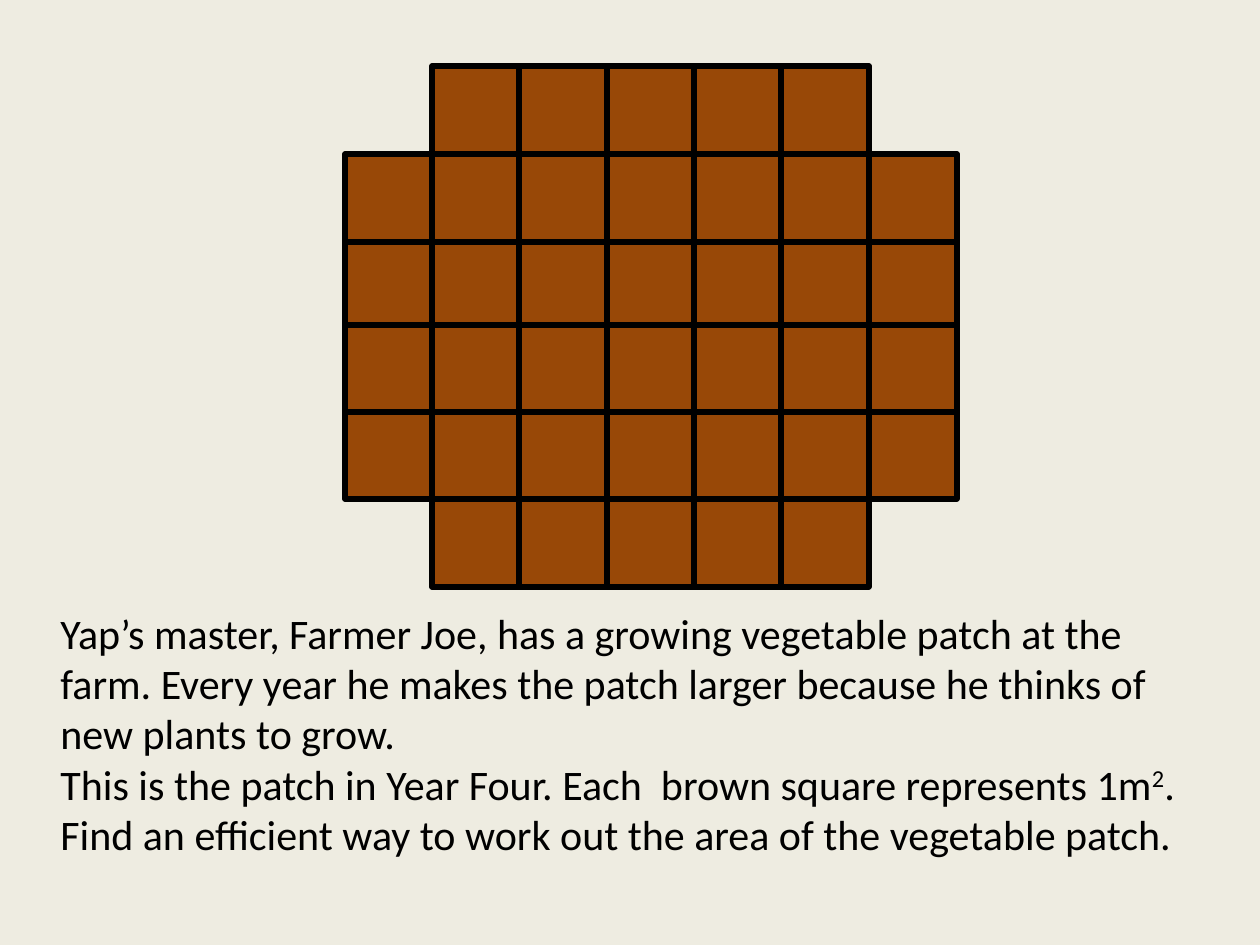
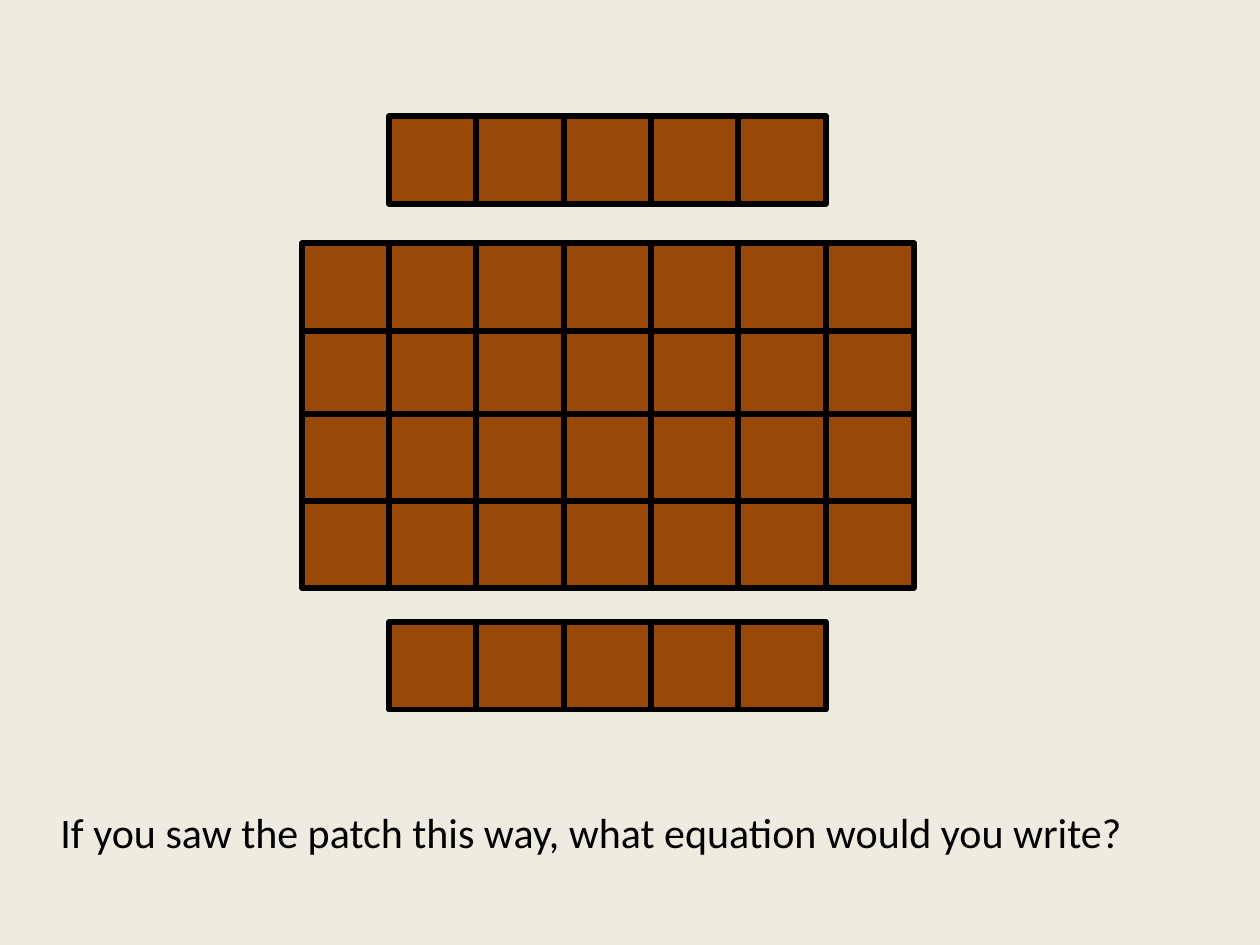
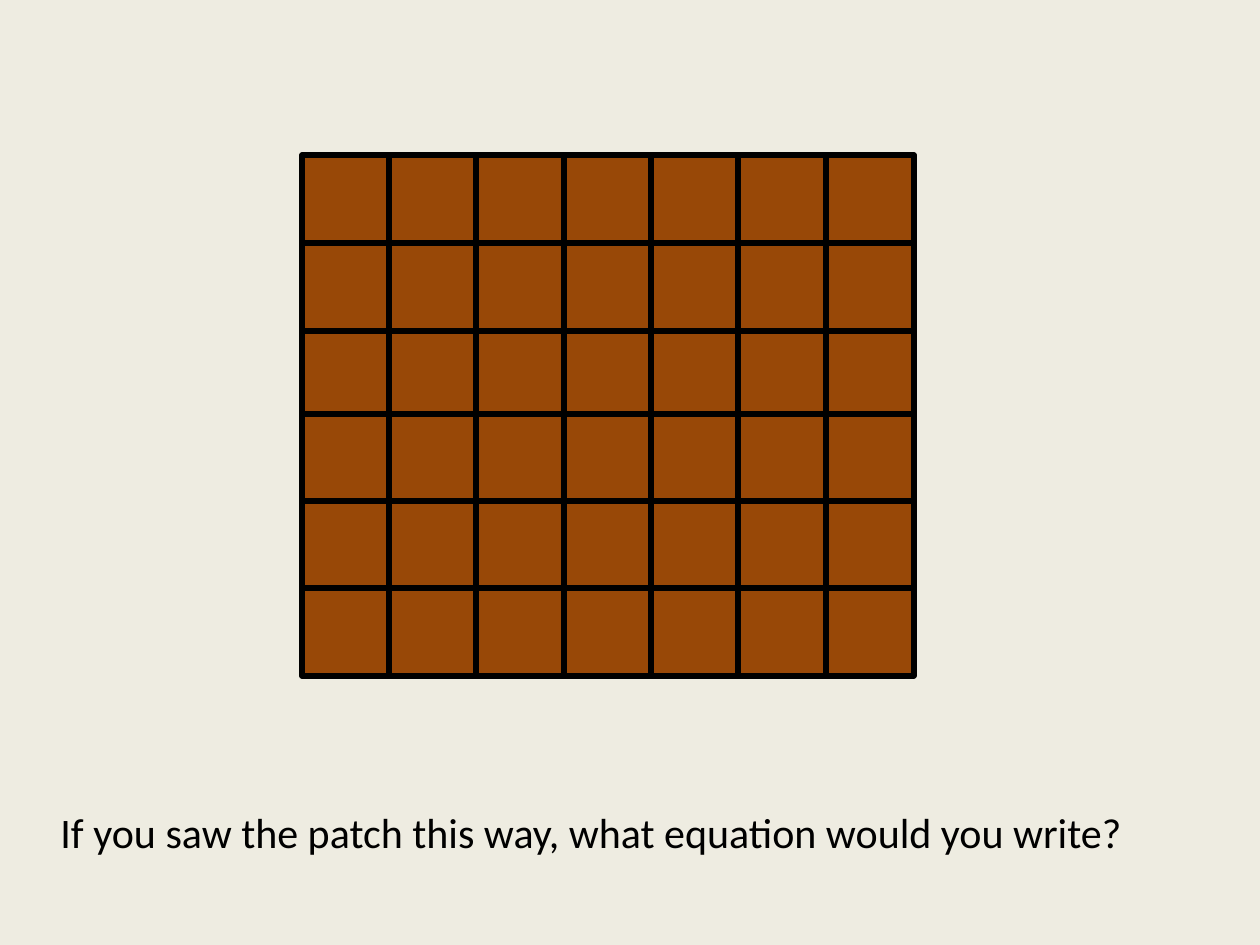
import dataclasses

import pptx
import pptx.dml.color
import pptx.enum.shapes
import pptx.enum.text
import pptx.util

EMU_PER_PX = 914400 // 126


@dataclasses.dataclass(frozen=True)
class Theme:
    background: str = "EEECE1"
    soil: str = "984807"
    ink: str = "000000"
    font: str = "Calibri"
    body_size: int = 24
    border_width: int = 3


def px(length):
    return length * EMU_PER_PX


def rgb(value):
    return pptx.dml.color.RGBColor.from_string(value)


def write_run(paragraph, text, *, font, size, color, superscript=False):
    run = paragraph.add_run()
    run.text = text
    run.font.name = font
    run.font.size = pptx.util.Pt(size)
    run.font.color.rgb = rgb(color)
    if superscript:
        run.font._element.set("baseline", "30000")


class PatchDeck:
    SQUARE = 88
    COLUMNS = 7
    COLUMN_SPAN = 524
    BED_ROW_OFFSETS = (0, 83, 170, 257)

    def __init__(self, theme):
        self.theme = theme
        self.presentation = pptx.Presentation()
        self.presentation.slide_width = px(1260)
        self.presentation.slide_height = px(945)
        self.slide = None

    def new_slide(self):
        blank = self.presentation.slide_layouts[6]
        self.slide = self.presentation.slides.add_slide(blank)
        fill = self.slide.background.fill
        fill.solid()
        fill.fore_color.rgb = rgb(self.theme.background)

    def square(self, patch, left, top):
        square = patch.shapes.add_shape(
            pptx.enum.shapes.MSO_SHAPE.RECTANGLE,
            px(left), px(top), px(self.SQUARE), px(self.SQUARE))
        square.shadow.inherit = False
        square.fill.solid()
        square.fill.fore_color.rgb = rgb(self.theme.soil)
        square.line.color.rgb = rgb(self.theme.ink)
        square.line.width = pptx.util.Pt(self.theme.border_width)

    def row(self, patch, left, top, columns):
        for column in columns:
            offset = self.COLUMN_SPAN * column // (self.COLUMNS - 1)
            self.square(patch, left + offset, top)

    def patch(self, left, bed_top, strip_tops, strip_columns):
        patch = self.slide.shapes.add_group_shape()
        for offset in reversed(self.BED_ROW_OFFSETS):
            self.row(patch, left, bed_top + offset, range(self.COLUMNS))
        for top in strip_tops:
            self.row(patch, left, top, strip_columns)

    def text(self, top, height, paragraphs):
        box = self.slide.shapes.add_textbox(px(48), px(top), px(1171), px(height))
        frame = box.text_frame
        frame.word_wrap = True
        frame.auto_size = pptx.enum.text.MSO_AUTO_SIZE.SHAPE_TO_FIT_TEXT
        for index, runs in enumerate(paragraphs):
            paragraph = frame.add_paragraph() if index else frame.paragraphs[0]
            for text, superscript in runs:
                write_run(paragraph, text, font=self.theme.font,
                          size=self.theme.body_size, color=self.theme.ink,
                          superscript=superscript)

    def question(self):
        self.text(800, 63, [[
            ("If you saw the patch this way, what equation would you write?", False)]])


def main():
    deck = PatchDeck(Theme())
    whole_row = range(deck.COLUMNS)
    inner_columns = whole_row[1:-1]

    deck.new_slide()
    deck.patch(345, 154, (66, 499), inner_columns)
    deck.text(601, 267, [
        [("Yap’s master, Farmer Joe, has a growing vegetable patch at the farm. "
          "Every year he makes the patch larger because he thinks of new plants to grow.",
          False)],
        [("This is the patch in Year Four. Each  brown square represents 1m", False),
         ("2", True), (".", False)],
        [("Find an efficient way to work out the area of the vegetable patch.", False)],
    ])

    for strip_tops, strip_columns in (((116, 622), inner_columns),
                                      ((155, 588), whole_row)):
        deck.new_slide()
        deck.question()
        deck.patch(302, 243, strip_tops, strip_columns)

    deck.presentation.save("out.pptx")


if __name__ == "__main__":
    main()
